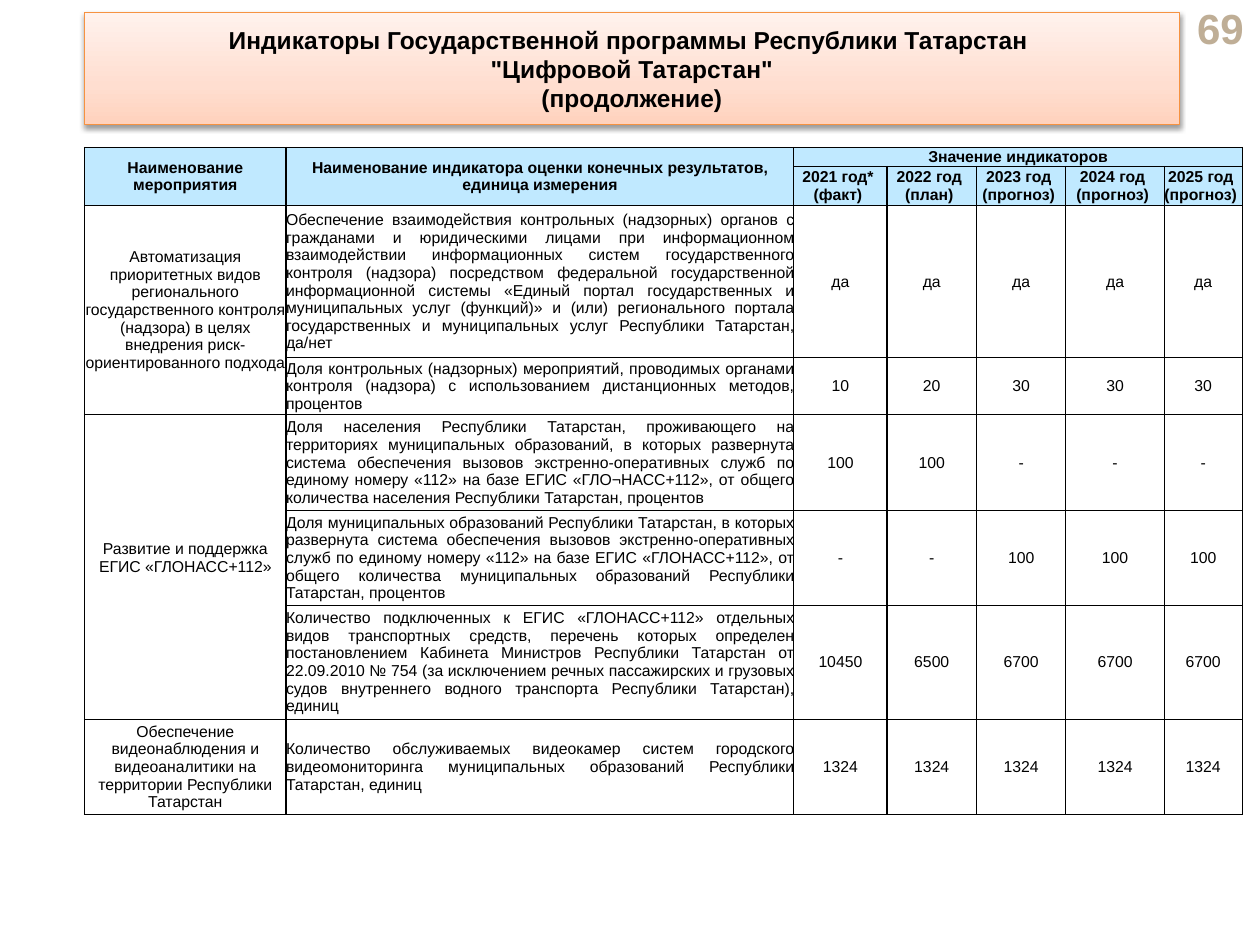
import pptx
import pptx.dml.color
import pptx.enum.text
import pptx.oxml
import pptx.oxml.ns
import pptx.util
from pptx.util import Inches

ALIGN = pptx.enum.text.PP_ALIGN
MIDDLE = pptx.enum.text.MSO_ANCHOR.MIDDLE
NS = pptx.oxml.ns.nsdecls("a")


def hue(code):
    return pptx.dml.color.RGBColor.from_string(code)


def node(xml):
    return pptx.oxml.parse_xml(xml.replace(">", f" {NS}>", 1))


class Deck:
    font = "Arial"
    ink = "000000"
    head = "C0E9FF"

    def __init__(self):
        self.file = pptx.Presentation()
        self.file.slide_width = Inches(10)
        self.file.slide_height = Inches(7.5)
        self.slide = self.file.slides.add_slide(self.file.slide_layouts[5])

    def put(self, para, text, size, bold=False, color=ink, align=ALIGN.CENTER):
        para.alignment = align
        for i, line in enumerate(text.split("\n")):
            if i:
                para.add_line_break()
            run = para.add_run()
            run.text = line
            run.font.name = self.font
            run.font.size = pptx.util.Pt(size)
            run.font.bold = bold
            run.font.color.rgb = hue(color)

    def title(self, lines, left, top, width, height):
        box = self.slide.shapes.title
        box.left, box.top = Inches(left), Inches(top)
        box.width, box.height = Inches(width), Inches(height)
        props = box._element.spPr
        props.insert(1, node('<a:prstGeom prst="roundRect"><a:avLst/></a:prstGeom>'))
        stops = [(0, "FFD2BD"), (35, "FFDED0"), (100, "FFF2ED")]
        marks = "".join(
            f'<a:gs pos="{pos * 1000}"><a:srgbClr val="{code}"/></a:gs>'
            for pos, code in stops)
        props.insert(2, node(
            f'<a:gradFill rotWithShape="1"><a:gsLst>{marks}</a:gsLst>'
            '<a:lin ang="16200000" scaled="0"/></a:gradFill>'))
        box.line.color.rgb = hue("F69240")
        box.line.width = pptx.util.Pt(0.75)
        props.append(node(
            '<a:effectLst><a:outerShdw blurRad="39370" dist="20320" dir="5400000" '
            'rotWithShape="0"><a:srgbClr val="000000"><a:alpha val="38000"/>'
            '</a:srgbClr></a:outerShdw></a:effectLst>'))
        frame = box.text_frame
        frame.word_wrap = True
        frame.auto_size = pptx.enum.text.MSO_AUTO_SIZE.NONE
        frame.vertical_anchor = MIDDLE
        for i, line in enumerate(lines):
            para = frame.add_paragraph() if i else frame.paragraphs[0]
            self.put(para, line, 14, True)

    def label(self, text, left, top, width, height):
        box = self.slide.shapes.add_textbox(
            Inches(left), Inches(top), Inches(width), Inches(height))
        frame = box.text_frame
        frame.word_wrap = True
        frame.vertical_anchor = MIDDLE
        self.put(frame.paragraphs[0], text, 24, True, "BFAE96", ALIGN.RIGHT)

    def cell(self, cell, text, head, align, sides):
        cell.margin_left, cell.margin_right = map(Inches, sides)
        cell.margin_top = cell.margin_bottom = 0
        cell.vertical_anchor = MIDDLE
        props = cell._tc.get_or_add_tcPr()
        for side in "LRTB":
            props.append(node(
                f'<a:ln{side} w="9525"><a:solidFill><a:srgbClr val="{self.ink}"/>'
                f'</a:solidFill></a:ln{side}>'))
        if head:
            cell.fill.solid()
            cell.fill.fore_color.rgb = hue(self.head)
        else:
            cell.fill.background()
        if text:
            self.put(cell.text_frame.paragraphs[0], text, 9, head, align=align)

    def table(self, data, cols, rows, spans, left, top):
        grid = self.slide.shapes.add_table(
            len(rows), len(cols), Inches(left), Inches(top),
            Inches(sum(cols)), Inches(sum(rows))).table
        grid.first_row = grid.horz_banding = False
        for col, width in zip(grid.columns, cols):
            col.width = Inches(width)
        for row, height in zip(grid.rows, rows):
            row.height = Inches(height)
        for r, line in enumerate(data):
            for c, text in enumerate(line):
                head = r < 2
                align = ALIGN.JUSTIFY if c == 1 and not head else ALIGN.CENTER
                sides = (0.04 if r == 0 else 0, 0.04 if head else 0)
                self.cell(grid.cell(r, c), text, head, align, sides)
        for r, c, down, over in spans:
            grid.cell(r, c).merge(grid.cell(r + down - 1, c + over - 1))
        return grid


COLS = [1.6, 4.03, 0.74, 0.71, 0.71, 0.78, 0.62]
ROWS = [0.15, 0.31, 1.21, 0.45, 0.76, 0.75, 0.9, 0.76]
SPANS = [(0, 0, 2, 1), (0, 1, 2, 1), (0, 2, 1, 5), (2, 0, 2, 1), (4, 0, 3, 1)]
YEARS = [f"{year}\n({kind})" for year, kind in [
    ("2021 год*", "факт"), ("2022 год", "план"), ("2023 год", "прогноз"),
    ("2024 год", "прогноз"), ("2025 год", "прогноз")]]
DATA = [
    ["Наименование мероприятия",
     "Наименование индикатора оценки конечных результатов, единица измерения",
     "Значение индикаторов", "", "", "", ""],
    ["", "", *YEARS],
    ["Автоматизация приоритетных видов регионального государственного контроля "
     "(надзора) в целях внедрения риск-ориентированного подхода",
     "Обеспечение взаимодействия контрольных (надзорных) органов с гражданами и "
     "юридическими лицами при информационном взаимодействии информационных систем "
     "государственного контроля (надзора) посредством федеральной государственной "
     "информационной системы «Единый портал государственных и муниципальных услуг "
     "(функций)» и (или) регионального портала государственных и муниципальных "
     "услуг Республики Татарстан, да/нет",
     *["да"] * 5],
    ["",
     "Доля контрольных (надзорных) мероприятий, проводимых органами контроля "
     "(надзора) с использованием дистанционных методов, процентов",
     "10", "20", "30", "30", "30"],
    ["Развитие и поддержка ЕГИС «ГЛОНАСС+112»",
     "Доля населения Республики Татарстан, проживающего на территориях "
     "муниципальных образований, в которых развернута система обеспечения вызовов "
     "экстренно-оперативных служб по единому номеру «112» на базе ЕГИС "
     "«ГЛО¬НАСС+112», от общего количества населения Республики Татарстан, процентов",
     "100", "100", "-", "-", "-"],
    ["",
     "Доля муниципальных образований Республики Татарстан, в которых развернута "
     "система обеспечения вызовов экстренно-оперативных служб по единому номеру "
     "«112» на базе ЕГИС «ГЛОНАСС+112», от общего количества муниципальных "
     "образований Республики Татарстан, процентов",
     "-", "-", "100", "100", "100"],
    ["",
     "Количество подключенных к ЕГИС «ГЛОНАСС+112» отдельных видов транспортных "
     "средств, перечень которых определен постановлением Кабинета Министров "
     "Республики Татарстан от 22.09.2010 № 754 (за исключением речных пассажирских "
     "и грузовых судов внутреннего водного транспорта Республики Татарстан), единиц",
     "10450", "6500", *["6700"] * 3],
    ["Обеспечение видеонаблюдения и видеоаналитики на территории Республики Татарстан",
     "Количество обслуживаемых видеокамер систем городского видеомониторинга "
     "муниципальных образований Республики Татарстан, единиц",
     *["1324"] * 5],
]


def main():
    deck = Deck()
    deck.label("69", 9.11, 0.05, 0.86, 0.34)
    deck.title(["Индикаторы Государственной программы Республики Татарстан ",
                "\"Цифровой Татарстан\"", "(продолжение)"], 0.67, 0.1, 8.69, 0.89)
    grid = deck.table(DATA, COLS, ROWS, SPANS, 0.67, 1.17)
    grid.cell(4, 0).margin_bottom = Inches(0.14)
    deck.file.save("out.pptx")


if __name__ == "__main__":
    main()
